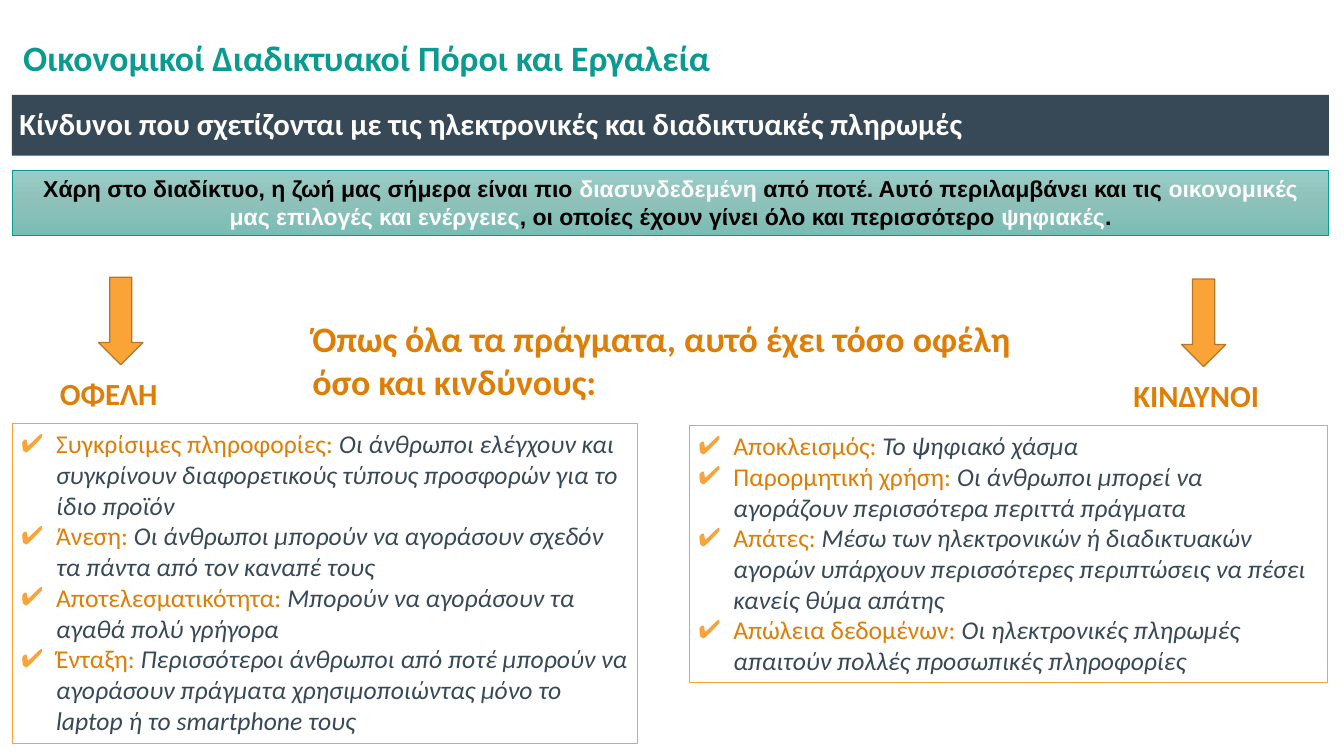
from copy import deepcopy

from lxml import etree
from pptx import Presentation
from pptx.dml.color import RGBColor
from pptx.enum import shapes, text
from pptx.oxml.ns import qn
from pptx.util import Inches, Pt

COLORS = {
    "teal": "0A9A8F", "slate": "374856", "orange": "DF7E06", "amber": "FAA337",
    "brown": "B67628", "white": "FFFFFF", "black": "000000",
    "band_top": "9ACCC6", "band_middle": "8DC1BA", "band_bottom": "78BCB3",
}

TITLE = "Οικονομικοί Διαδικτυακοί Πόροι και Εργαλεία"
HEADING = "Κίνδυνοι που σχετίζονται με τις ηλεκτρονικές και διαδικτυακές πληρωμές"
INTRO = [
    ("Χάρη στο διαδίκτυο, η ζωή μας σήμερα είναι πιο ", "black"),
    ("διασυνδεδεμένη", "white"),
    (" από ποτέ. Αυτό περιλαμβάνει και τις ", "black"),
    ("οικονομικές μας επιλογές και ενέργειες", "white"),
    (", οι οποίες έχουν γίνει όλο και περισσότερο ", "black"),
    ("ψηφιακές", "white"),
    (".", "black"),
]
QUESTION = "Όπως όλα τα πράγματα, αυτό έχει τόσο οφέλη όσο και κινδύνους:"
BENEFITS = [
    ("Συγκρίσιμες πληροφορίες: ", "Οι άνθρωποι ελέγχουν και συγκρίνουν "
     "διαφορετικούς τύπους προσφορών για το ίδιο προϊόν"),
    ("Άνεση: ", "Οι άνθρωποι μπορούν να αγοράσουν σχεδόν τα πάντα από τον "
     "καναπέ τους"),
    ("Αποτελεσματικότητα: ", "Μπορούν να αγοράσουν τα αγαθά πολύ γρήγορα"),
    ("Ένταξη: ", "Περισσότεροι άνθρωποι από ποτέ μπορούν να αγοράσουν πράγματα "
     "χρησιμοποιώντας μόνο το laptop ή το smartphone τους"),
]
RISKS = [
    ("Αποκλεισμός: ", "Το ψηφιακό χάσμα"),
    ("Παρορμητική χρήση: ", "Οι άνθρωποι μπορεί να αγοράζουν περισσότερα "
     "περιττά πράγματα"),
    ("Απάτες: ", "Μέσω των ηλεκτρονικών ή διαδικτυακών αγορών υπάρχουν "
     "περισσότερες περιπτώσεις να πέσει κανείς θύμα απάτης"),
    ("Απώλεια δεδομένων: ", "Οι ηλεκτρονικές πληρωμές απαιτούν πολλές "
     "προσωπικές πληροφορίες"),
]
# label, points, list box, label left and width, arrow left, top of the arrow
SIDES = [
    ("ΟΦΕΛΗ", BENEFITS, (0.13, 4.6, 6.79, 3.47), (0.55, 1.51), 1.07, 3.01),
    ("ΚΙΝΔΥΝΟΙ", RISKS, (7.48, 4.62, 6.93, 2.79), (12.2, 1.67), 12.82, 3.03),
]
LABEL_DROP = 1.01  # from the top of an arrow to its label


def rgb(name):
    return RGBColor.from_string(COLORS[name])


def box(values):
    return [Inches(value) for value in values]


def add_run(paragraph, words, size, color, font="Calibri", bold=False, italic=False):
    run = paragraph.add_run()
    run.text = words
    run.font.name = font
    run.font.size = Pt(size)
    run.font.bold = bold
    run.font.italic = italic
    run.font.color.rgb = rgb(color)


def set_frame(shape, anchor, side=0.1, top=0.05):
    """Wrap the text, set its insets and return its first paragraph."""
    frame = shape.text_frame
    frame.word_wrap = True
    frame.auto_size = text.MSO_AUTO_SIZE.NONE
    frame.vertical_anchor = anchor
    frame.margin_left = frame.margin_right = Inches(side)
    frame.margin_top, frame.margin_bottom = Inches(top), Inches(0.05)
    return frame.paragraphs[0]


def fill_placeholder(holder, position, anchor, top, align, words, size, color):
    holder.left, holder.top, holder.width, holder.height = box(position)
    paragraph = set_frame(holder, anchor, 0.08, top)
    paragraph.alignment = align
    paragraph.line_spacing = 0.9
    paragraph.space_before = Pt(0)
    add_run(paragraph, words, size, color, bold=True)
    return paragraph


def add_preset(kind, position, line, width, fill=None):
    shape = slide.shapes.add_shape(kind, *box(position))
    shape.shadow.inherit = False
    shape.line.color.rgb = rgb(line)
    shape.line.width = Pt(width)
    if fill:
        shape.fill.solid()
        shape.fill.fore_color.rgb = rgb(fill)
    else:
        shape.fill.background()
    return shape


def add_caption(position, words, size):
    caption = slide.shapes.add_textbox(*box(position))
    add_run(set_frame(caption, text.MSO_ANCHOR.TOP), words, size, "orange", bold=True)


def set_bullet(paragraph, mark=None, indent=0.0):
    properties = paragraph._p.get_or_add_pPr()
    properties.set("marL", str(Inches(indent)))
    properties.set("indent", str(-Inches(indent)))
    if mark is None:
        etree.SubElement(properties, qn("a:buNone"))
        return
    color = etree.SubElement(properties, qn("a:buClr"))
    etree.SubElement(color, qn("a:srgbClr"), val=COLORS["amber"])
    etree.SubElement(properties, qn("a:buFont"), typeface="Arial")
    etree.SubElement(properties, qn("a:buChar"), char=mark)


def shade_band(fill):
    """Three-stop gradient from top to bottom."""
    fill.gradient()
    fill.gradient_angle = 270
    first = fill.gradient_stops[0]._gs
    first.addnext(deepcopy(first))
    names = ("band_top", "band_middle", "band_bottom")
    for stop, name, place in zip(fill.gradient_stops, names, (0, 0.5, 1)):
        stop.color.rgb = rgb(name)
        stop.position = place


def add_points(position, points):
    panel = add_preset(shapes.MSO_SHAPE.RECTANGLE, position, "amber", 0.75)
    paragraph = set_frame(panel, text.MSO_ANCHOR.TOP)
    for number, (term, meaning) in enumerate(points):
        if number:
            paragraph = panel.text_frame.add_paragraph()
        paragraph.alignment = text.PP_ALIGN.LEFT
        set_bullet(paragraph, "✔", 0.38)
        add_run(paragraph, term, 20, "orange")
        add_run(paragraph, meaning, 20, "slate", italic=True)


deck = Presentation()
deck.slide_width, deck.slide_height = Pt(1050), Pt(591)
slide = deck.slides.add_slide(deck.slide_layouts[1])

fill_placeholder(slide.shapes.title, (0.17, 0.44, 13.86, 0.79), text.MSO_ANCHOR.TOP,
                 0, text.PP_ALIGN.LEFT, TITLE, 27.9, "teal")
heading = slide.placeholders[1]
heading.fill.solid()
heading.fill.fore_color.rgb = rgb("slate")
set_bullet(fill_placeholder(heading, (0.13, 1.03, 14.29, 0.66), text.MSO_ANCHOR.MIDDLE,
                            0.05, text.PP_ALIGN.JUSTIFY, HEADING, 24, "white"))

intro = add_preset(shapes.MSO_SHAPE.RECTANGLE, (0.13, 1.85, 14.29, 0.71), "teal", 0.75)
shade_band(intro.fill)
sentence = set_frame(intro, text.MSO_ANCHOR.TOP)
sentence.alignment = text.PP_ALIGN.CENTER
for words, color in INTRO:
    add_run(sentence, words, 18, color, font="Arial", bold=True)

for label, points, panel_box, (label_left, label_width), arrow_left, top in SIDES:
    add_points(panel_box, points)
    add_preset(shapes.MSO_SHAPE.DOWN_ARROW, (arrow_left, top, 0.48, 0.95),
               "brown", 1, "amber")
    add_caption((label_left, top + LABEL_DROP, label_width, 0.5), label, 24)

add_caption((3.29, 3.39, 8, 1.04), QUESTION, 28)

deck.save("out.pptx")
